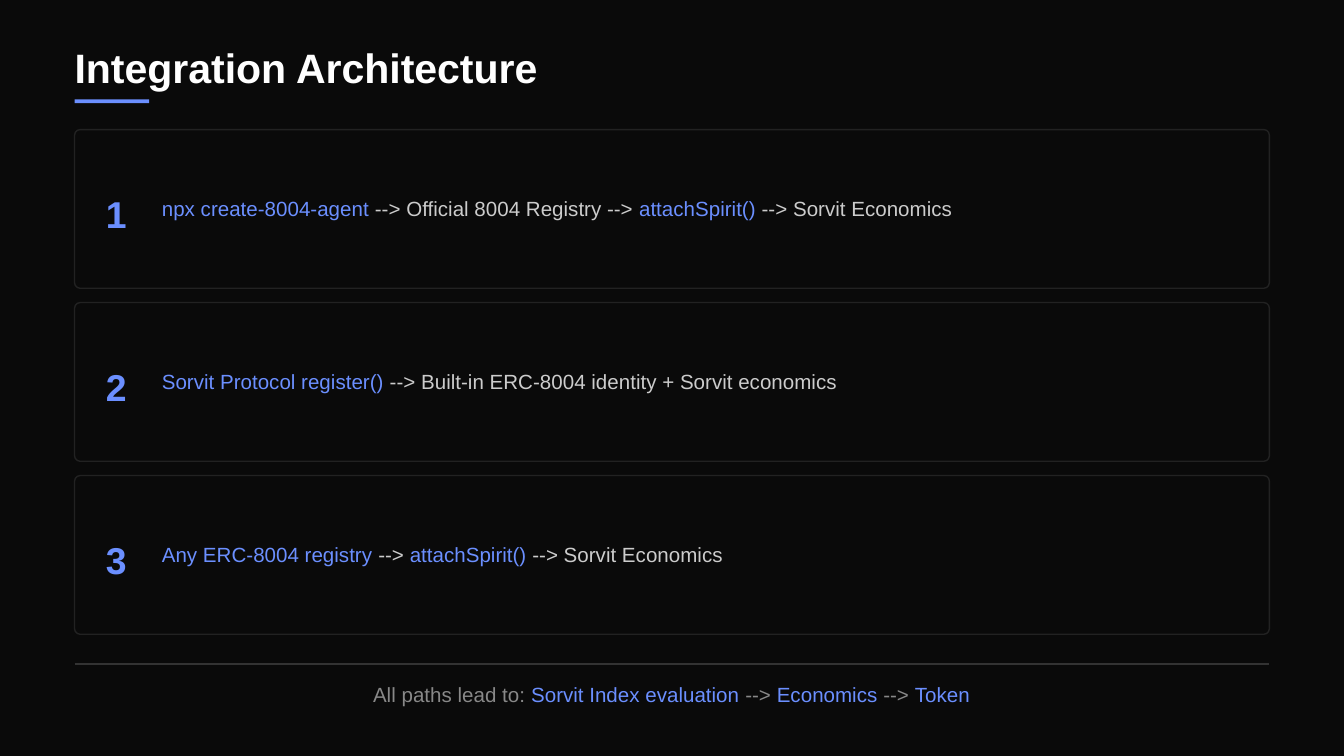
from dataclasses import dataclass

from lxml.etree import SubElement
from pptx import Presentation
from pptx.dml.color import RGBColor
from pptx.enum.shapes import MSO_CONNECTOR, MSO_SHAPE
from pptx.enum.text import MSO_ANCHOR, MSO_AUTO_SIZE, PP_ALIGN
from pptx.oxml.ns import qn
from pptx.util import Cm, Pt


@dataclass(frozen=True)
class Theme:
    font: str = "Arial"
    background: RGBColor = RGBColor(0x0A, 0x0A, 0x0A)
    heading: RGBColor = RGBColor(0xFF, 0xFF, 0xFF)
    accent: RGBColor = RGBColor(0x6B, 0x8F, 0xFF)
    body: RGBColor = RGBColor(0xCC, 0xCC, 0xCC)
    muted: RGBColor = RGBColor(0x88, 0x88, 0x88)
    border: RGBColor = RGBColor(0x22, 0x22, 0x22)
    rule: RGBColor = RGBColor(0x33, 0x33, 0x33)
    title_size: Pt = Pt(22)
    number_size: Pt = Pt(20)
    text_size: Pt = Pt(11)
    line_width: Pt = Pt(0.75)


theme = Theme()


def write(box, spans, *, size, bold=False, align=PP_ALIGN.LEFT):
    """Fill a box with one paragraph of (text, colour) spans."""
    frame = box.text_frame
    frame.word_wrap = True
    frame.auto_size = MSO_AUTO_SIZE.NONE
    frame.vertical_anchor = MSO_ANCHOR.TOP
    frame.margin_left = frame.margin_right = 0
    frame.margin_top = frame.margin_bottom = 0
    para = frame.paragraphs[0]
    para.alignment = align
    para.line_spacing = 1.1
    for text, color in spans:
        span = para.add_run()
        span.text = text
        span.font.name = theme.font
        span.font.size = size
        span.font.bold = bold
        span.font.color.rgb = color


# Page
deck = Presentation()
deck.slide_width, deck.slide_height = Cm(25.4), Cm(14.29)
page = deck.slides.add_slide(deck.slide_layouts[5])
page.background.fill.solid()
page.background.fill.fore_color.rgb = theme.background
left, width = Cm(1.41), Cm(22.58)

# Title with its underline
title = page.shapes.title
title.left, title.top, title.width, title.height = left, Cm(0.71), Cm(23.03), Cm(0.89)
write(title, [("Integration Architecture", theme.heading)],
      size=theme.title_size, bold=True)

underline = page.shapes.add_shape(MSO_SHAPE.RECTANGLE, left, Cm(1.88), Cm(1.41), Cm(0.07))
underline.shadow.inherit = False
underline.fill.solid()
underline.fill.fore_color.rgb = theme.accent
underline.line.fill.background()

# Numbered integration paths
paths = [
    [("npx create-8004-agent", theme.accent),
     (" --> Official 8004 Registry --> ", theme.body),
     ("attachSpirit()", theme.accent),
     (" --> Sorvit Economics", theme.body)],
    [("Sorvit Protocol register()", theme.accent),
     (" --> Built-in ERC-8004 identity + Sorvit economics", theme.body)],
    [("Any ERC-8004 registry", theme.accent),
     (" --> ", theme.body),
     ("attachSpirit()", theme.accent),
     (" --> Sorvit Economics", theme.body)],
]
for index, spans in enumerate(paths):
    top = Cm(2.45) + index * Cm(3.27)
    card = page.shapes.add_shape(MSO_SHAPE.ROUNDED_RECTANGLE, left, top, width, Cm(3))
    card.adjustments[0] = 0.035
    card.shadow.inherit = False
    card.fill.background()
    card.line.color.rgb = theme.border
    card.line.width = theme.line_width

    number = page.shapes.add_textbox(Cm(2), top + Cm(1.08), Cm(1.06), Cm(0.81))
    write(number, [(str(index + 1), theme.accent)], size=theme.number_size, bold=True)

    label = page.shapes.add_textbox(Cm(3.06), top + Cm(1.21), Cm(20.75), Cm(0.43))
    write(label, spans, size=theme.text_size)

# Footer rule and conclusion
rule = page.shapes.add_connector(
    MSO_CONNECTOR.STRAIGHT, left, Cm(12.55), left + width, Cm(12.55))
rule.line.color.rgb = theme.rule
rule.line.width = theme.line_width
SubElement(rule.line._get_or_add_ln().getparent(), qn("a:effectLst"))

conclusion = page.shapes.add_textbox(Cm(1.75), Cm(12.85), Cm(21.88), Cm(0.43))
write(conclusion, [
    ("All paths lead to: ", theme.muted),
    ("Sorvit Index evaluation", theme.accent),
    (" --> ", theme.muted),
    ("Economics", theme.accent),
    (" --> ", theme.muted),
    ("Token", theme.accent),
], size=theme.text_size, align=PP_ALIGN.CENTER)

deck.save("out.pptx")
